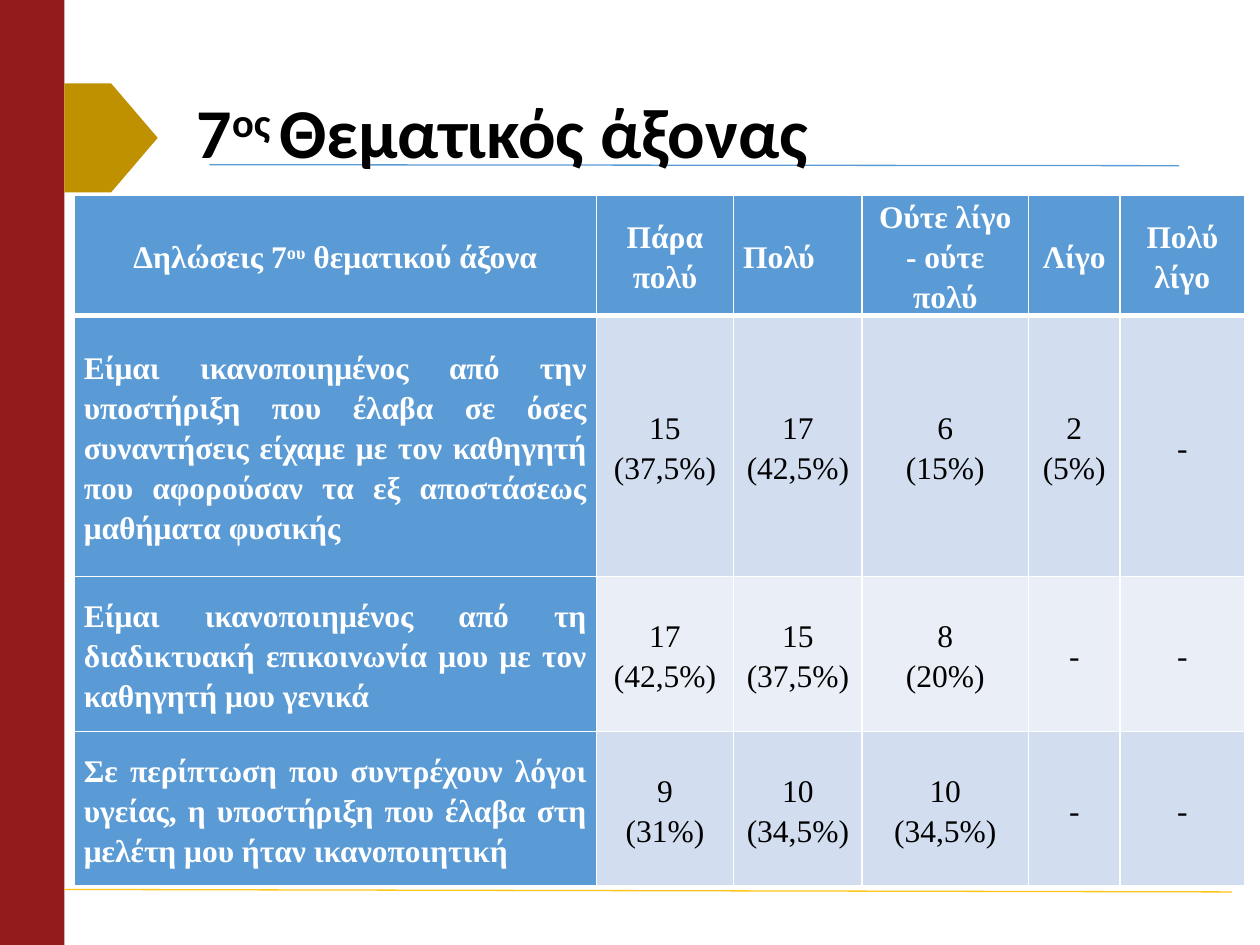
from lxml import etree
from pptx import Presentation
from pptx.dml.color import RGBColor
from pptx.enum import shapes, text
from pptx.oxml import ns
from pptx.util import Cm, Pt

COLORS = {
    "band": "931B1B", "arrow": "BF9000", "blue": "5B9BD5", "gold": "FFC61A",
    "odd": "D2DEEF", "even": "EAEFF7", "white": "FFFFFF", "black": "000000",
}
HEADING = ["7", "ος ", "Θεματικός άξονας"]
HEADERS = [
    ["Δηλώσεις 7", "ου", " θεματικού άξονα"],
    ["Πάρα πολύ"], ["Πολύ"], ["Ούτε λίγο - ούτε πολύ"], ["Λίγο"], ["Πολύ λίγο"],
]
ANSWERS = [
    ("Είμαι ικανοποιημένος από την υποστήριξη που έλαβα σε όσες συναντήσεις είχαμε "
     "με τον καθηγητή που αφορούσαν τα εξ αποστάσεως μαθήματα φυσικής",
     "15 (37,5%)", "17 (42,5%)", "6\n(15%)", "2 (5%)", "-"),
    ("Είμαι ικανοποιημένος από τη διαδικτυακή επικοινωνία μου με τον καθηγητή μου γενικά",
     "17 (42,5%)", "15 (37,5%)", "8\n(20%)", "-", "-"),
    ("Σε περίπτωση που συντρέχουν λόγοι υγείας, η υποστήριξη που έλαβα στη μελέτη μου "
     "ήταν ικανοποιητική",
     "9\n(31%)", "10\n(34,5%)", "10\n(34,5%)", "-", "-"),
]
COLUMN_WIDTHS = [10.52, 2.77, 2.59, 3.35, 1.85, 2.51]
ROW_HEIGHTS = [2.06, 5.26, 3.12, 3.12]
BLOCKS = [
    (shapes.MSO_SHAPE.RECTANGLE, (0, 0, 1.3, 19.05), "band"),
    (shapes.MSO_SHAPE.PENTAGON, (1.3, 1.68, 1.88, 2.2), "arrow"),
]
RULES = [((4.22, 3.32, 23.77, 3.34), "blue"), ((1.3, 17.93, 24.84, 17.98), "gold")]
ALIGN = text.PP_ALIGN


def color(name):
    return RGBColor.from_string(COLORS[name])


def set_font(paragraph, name, size, shade, bold):
    font = paragraph.font
    font.name, font.size, font.bold = name, Pt(size), bold
    font.color.rgb = color(shade)


def write_raised(paragraph, parts):
    for index, part in enumerate(parts):
        run = paragraph.add_run()
        run.text = part
        if index == 1:
            run.font._element.set("baseline", "30000")


def border_cell(cell, is_header, below_header):
    properties = cell._tc.get_or_add_tcPr()
    for index, side in enumerate(("lnL", "lnR", "lnT", "lnB")):
        thick = (side == "lnB" and is_header) or (side == "lnT" and below_header)
        line = etree.Element(ns.qn(f"a:{side}"), w=str(Pt(3 if thick else 1)))
        fill = etree.SubElement(line, ns.qn("a:solidFill"))
        etree.SubElement(fill, ns.qn("a:srgbClr"), val=COLORS["white"])
        properties.insert(index, line)


def fill_cell(cell, content, row, column):
    is_header = row == 0
    is_label = is_header or column == 0
    cell.fill.solid()
    cell.fill.fore_color.rgb = color("blue" if is_label else "odd" if row % 2 else "even")
    cell.vertical_anchor = text.MSO_ANCHOR.MIDDLE
    cell.margin_left = cell.margin_right = Cm(0.19)
    cell.margin_top = cell.margin_bottom = 0
    if is_header:
        write_raised(cell.text_frame.paragraphs[0], content)
        alignment = ALIGN.LEFT if column == 2 else ALIGN.CENTER
    else:
        cell.text_frame.text = content
        alignment = ALIGN.JUSTIFY if column == 0 else ALIGN.CENTER
    for paragraph in cell.text_frame.paragraphs:
        paragraph.alignment = alignment
        paragraph.line_spacing = 1.15
        set_font(paragraph, "Times New Roman", 18, "white" if is_label else "black", is_label)
    border_cell(cell, is_header, row == 1)


def add_decoration(slide):
    band, arrow = BLOCKS
    for kind, box, shade in (band, arrow):
        block = slide.shapes.add_shape(kind, *map(Cm, box))
        block.shadow.inherit = False
        block.fill.solid()
        block.fill.fore_color.rgb = color(shade)
        block.line.fill.background()
    for ends, shade in RULES:
        rule = slide.shapes.add_connector(shapes.MSO_CONNECTOR.STRAIGHT, *map(Cm, ends))
        rule.line.color.rgb = color(shade)
        rule.line.width = Pt(0.75)
        etree.SubElement(rule._element.spPr, ns.qn("a:effectLst"))


def add_heading(slide):
    heading = slide.shapes.title
    heading.left, heading.top, heading.width, heading.height = map(Cm, (3.71, 1.93, 21.59, 1.6))
    frame = heading.text_frame
    frame.auto_size = text.MSO_AUTO_SIZE.NONE
    frame.vertical_anchor = text.MSO_ANCHOR.MIDDLE
    paragraph = frame.paragraphs[0]
    paragraph.alignment = ALIGN.LEFT
    paragraph.line_spacing = 0.9
    write_raised(paragraph, HEADING)
    set_font(paragraph, "Calibri", 40, "black", True)
    slide.shapes._spTree.append(heading._element)


def add_answers(slide):
    rows = [HEADERS, *ANSWERS]
    answers = slide.shapes.add_table(
        len(rows), len(HEADERS), Cm(1.5), Cm(3.94),
        Cm(sum(COLUMN_WIDTHS)), Cm(sum(ROW_HEIGHTS))).table
    for column, width in zip(answers.columns, COLUMN_WIDTHS):
        column.width = Cm(width)
    for row, height in zip(answers.rows, ROW_HEIGHTS):
        row.height = Cm(height)
    for r, contents in enumerate(rows):
        for c, content in enumerate(contents):
            fill_cell(answers.cell(r, c), content, r, c)


def main():
    deck = Presentation()
    deck.slide_width, deck.slide_height = Cm(25.4), Cm(19.05)
    slide = deck.slides.add_slide(deck.slide_layouts[5])
    add_decoration(slide)
    add_heading(slide)
    add_answers(slide)
    deck.save("out.pptx")


if __name__ == "__main__":
    main()
